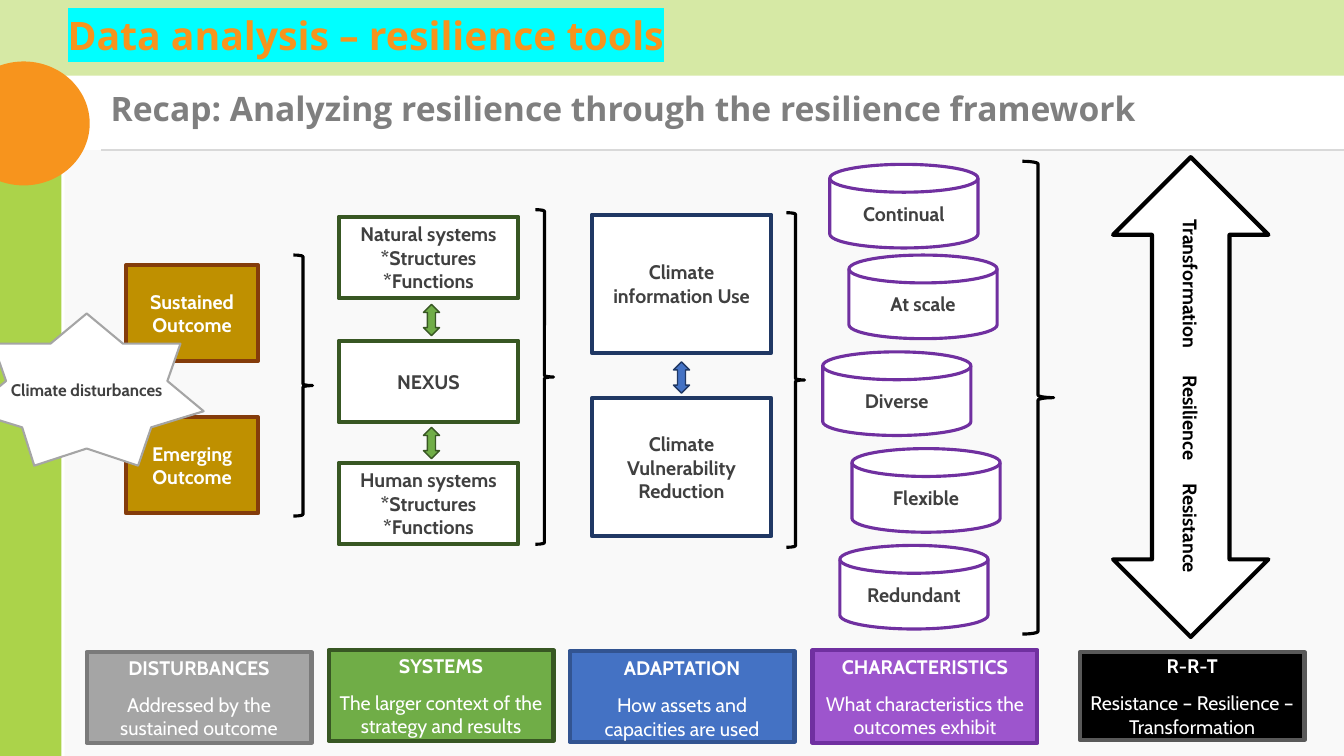
"""Build the resilience framework recap slide."""
from pptx import Presentation
from pptx.dml.color import RGBColor
from pptx.enum.shapes import MSO_CONNECTOR, MSO_SHAPE as Geo
from pptx.enum.text import MSO_ANCHOR as Anchor, MSO_AUTO_SIZE, PP_ALIGN as Align
from pptx.oxml.ns import qn
from pptx.util import Inches, Pt
from lxml.etree import SubElement

WHITE = RGBColor(0xFF, 0xFF, 0xFF)
BLACK = RGBColor(0x00, 0x00, 0x00)
PANEL = RGBColor(0xF2, 0xF2, 0xF2)
RULE = RGBColor(0xD9, 0xD9, 0xD9)
DARK = RGBColor(0x40, 0x40, 0x40)
HEADING = RGBColor(0x7F, 0x7F, 0x7F)
CHARCOAL = RGBColor(0x59, 0x59, 0x59)
GRAY = RGBColor(0xA5, 0xA5, 0xA5)
GRAY_EDGE = RGBColor(0x7A, 0x7A, 0x7A)
LIME = RGBColor(0xAB, 0xD3, 0x4A)
PALE_LIME = RGBColor(0xD6, 0xE9, 0xA5)
ORANGE = RGBColor(0xF7, 0x94, 0x1D)
GREEN = RGBColor(0x70, 0xAD, 0x47)
GREEN_EDGE = RGBColor(0x38, 0x57, 0x23)
BLUE = RGBColor(0x44, 0x72, 0xC4)
BLUE_EDGE = RGBColor(0x32, 0x54, 0x91)
NAVY = RGBColor(0x20, 0x38, 0x64)
VIOLET = RGBColor(0x9D, 0x55, 0xCD)
PURPLE = RGBColor(0x70, 0x30, 0xA0)
GOLD = RGBColor(0xBF, 0x90, 0x00)
BROWN = RGBColor(0x84, 0x3C, 0x0B)

CARDS = [
    (0.86, 6.47, 0.9, GRAY, GRAY_EDGE, "DISTURBANCES", "Addressed by the sustained outcome"),
    (3.26, 6.45, 0.9, GREEN, GREEN_EDGE, "SYSTEMS",
     "The larger context of the strategy and results"),
    (5.65, 6.46, 0.9, BLUE, BLUE_EDGE, "ADAPTATION", "How assets and capacities are used"),
    (8.06, 6.45, 0.92, VIOLET, PURPLE, "CHARACTERISTICS",
     "What characteristics the outcomes exhibit"),
    (10.71, 6.47, 0.87, BLACK, CHARCOAL, "R-R-T", "Resistance – Resilience – Transformation"),
]
SYSTEMS = [
    (2.15, ["Natural systems", "*Structures", "*Functions"]),
    (3.38, ["NEXUS"]),
    (4.59, ["Human systems", "*Structures", "*Functions"]),
]
DRUMS = [
    (8.55, 1.31, "Continual"),
    (8.74, 2.21, "At scale"),
    (8.48, 3.17, "Diverse"),
    (8.77, 4.13, "Flexible"),
    (8.65, 5.09, "Redundant"),
]
BRACES = [
    (2.91, 2.53, 0.19, 2.59),
    (5.31, 2.08, 0.18, 3.32),
    (7.8, 2.11, 0.18, 3.32),
    (10.14, 1.6, 0.31, 4.69),
]
SMALL_ARROWS = [
    (4.2, 3.02, GREEN, GREEN_EDGE),
    (4.2, 4.24, GREEN, GREEN_EDGE),
    (6.68, 3.59, BLUE, NAVY),
]
STAR = [
    (-0.3, 4.08), (0.06, 3.78), (-0.07, 3.41), (0.5, 3.41), (0.86, 3.11),
    (1.22, 3.41), (1.79, 3.41), (1.66, 3.78), (2.02, 4.08), (1.5, 4.24),
    (1.37, 4.62), (0.86, 4.45), (0.34, 4.62), (0.22, 4.24),
]
STAGES = "Transformation\tResilience\tResistance"
STAGE_TABS = (1.55, 2.62)


def write(shape, text, size=14, color=DARK, bold=True, font="Cabin", align=Align.CENTER,
          anchor=Anchor.MIDDLE, before=0, spacing=None, vertical=False, highlight=None, tabs=()):
    """Add one formatted paragraph to a shape."""
    frame = shape.text_frame
    frame.word_wrap = True
    frame.vertical_anchor = anchor
    if vertical:
        frame._txBody.bodyPr.set("vert", "vert")
    paragraph = frame.add_paragraph() if frame.text else frame.paragraphs[0]
    paragraph.alignment = align
    if before:
        paragraph.space_before = Pt(before)
    if spacing:
        paragraph.line_spacing = spacing
    if tabs:
        stops = SubElement(paragraph._p.get_or_add_pPr(), qn("a:tabLst"))
        for stop in tabs:
            SubElement(stops, qn("a:tab"), pos=str(Inches(stop)), algn="l")
    run = paragraph.add_run()
    run.text = text
    run.font.size, run.font.bold, run.font.name = Pt(size), bold, font
    run.font.color.rgb = color
    if highlight:
        props = run._r.get_or_add_rPr()
        mark = SubElement(props, qn("a:highlight"))
        SubElement(mark, qn("a:srgbClr"), val=highlight)
        props.find(qn("a:solidFill")).addnext(mark)


def paint(shape, fill=None, edge=None, weight=3):
    """Set fill and outline and drop the shadow."""
    shape.shadow.inherit = False
    if fill is None:
        shape.fill.background()
    else:
        shape.fill.solid()
        shape.fill.fore_color.rgb = fill
    if edge is None:
        shape.line.fill.background()
    else:
        shape.line.color.rgb = edge
        shape.line.width = Pt(weight)
    return shape


def add_preset(slide, geometry, box, fill=None, edge=None, weight=3):
    """Draw a preset shape in a box given in inches."""
    shape = slide.shapes.add_shape(geometry, *map(Inches, box))
    return paint(shape, fill, edge, weight)


def add_box(slide, box, lines, fill=WHITE, edge=NAVY, color=DARK):
    """Draw a framed rectangle with centred lines of text."""
    panel = add_preset(slide, Geo.RECTANGLE, box, fill, edge)
    for line in lines:
        write(panel, line, color=color)


def add_card(slide, left, top, height, fill, edge, heading, summary):
    """Draw a column caption card."""
    card = add_preset(slide, Geo.RECTANGLE, (left, top, 2.23, height), fill, edge)
    anchor = Anchor.TOP if heading == "ADAPTATION" else Anchor.MIDDLE
    write(card, heading, color=WHITE, anchor=anchor)
    write(card, summary, color=WHITE, bold=False, anchor=anchor, before=9.7)


def add_drum(slide, left, top, label):
    """Draw an upright drum with its label."""
    drum = add_preset(slide, Geo.FLOWCHART_DIRECT_ACCESS_STORAGE, (left, top, 0.83, 1.47),
                      WHITE, PURPLE, 2.25)
    drum.rotation = 270
    write(drum, label, vertical=True)


def add_backdrop(slide):
    """Draw the side bar, panel, band, circle and rule."""
    add_preset(slide, Geo.RECTANGLE, (0, 0, 0.61, 7.5), LIME)
    panel = add_preset(slide, Geo.RECTANGLE, (0.64, 1.49, 12.69, 6.01), PANEL)
    tint = panel._element.spPr.find(qn("a:solidFill"))[0]
    SubElement(tint, qn("a:alpha"), val="44000")
    add_preset(slide, Geo.RECTANGLE, (0, 0, 13.33, 0.75), PALE_LIME)
    add_preset(slide, Geo.OVAL, (-0.42, 0.61, 1.31, 1.23), ORANGE)
    rule = slide.shapes.add_connector(MSO_CONNECTOR.STRAIGHT, *map(Inches, (1, 1.49, 13.33, 1.49)))
    rule.line.color.rgb = RULE
    rule.line.width = Pt(1.5)
    SubElement(rule._element.spPr, qn("a:effectLst"))


def add_headings(slide):
    """Place the title over the band and the recap line under it."""
    title = slide.shapes.title
    slide.shapes.element.append(title.element)
    title.left, title.top, title.width, title.height = map(Inches, (0.57, 0.11, 10.54, 0.64))
    title.text_frame.auto_size = MSO_AUTO_SIZE.NONE
    heading = dict(font="Open Sans", align=Align.LEFT, anchor=Anchor.TOP, spacing=0.9)
    write(title, "Data analysis – resilience tools", size=28, color=ORANGE,
          highlight="00FFFF", **heading)
    recap = slide.shapes.add_textbox(*map(Inches, (1, 0.87, 12.33, 0.46)))
    write(recap, "Recap: Analyzing resilience through the resilience framework",
          size=24, color=HEADING, **heading)


def add_star(slide):
    """Draw the seven-pointed star of climate disturbances."""
    points = [(Inches(x), Inches(y)) for x, y in STAR]
    outline = slide.shapes.build_freeform(*points[0])
    outline.add_line_segments(points[1:], close=True)
    star = paint(outline.convert_to_shape(), WHITE, GRAY, 1.5)
    write(star, "Climate disturbances", size=12)


def main():
    """Compose and save the slide."""
    deck = Presentation()
    deck.slide_width, deck.slide_height = Inches(13.33), Inches(7.5)
    slide = deck.slides.add_slide(deck.slide_layouts[5])
    add_backdrop(slide)
    add_headings(slide)
    for card in CARDS:
        add_card(slide, *card)
    stages = add_preset(slide, Geo.UP_DOWN_ARROW, (11.04, 1.56, 1.54, 4.76), WHITE, BLACK)
    stages.text_frame.margin_top = Inches(0.23)
    write(stages, STAGES, color=BLACK, align=Align.LEFT, vertical=True, tabs=STAGE_TABS)
    for top, lines in SYSTEMS:
        add_box(slide, (3.36, top, 1.78, 0.81), lines, edge=GREEN_EDGE)
    for top, need in ((2.13, "Climate information Use"), (3.95, "Climate Vulnerability Reduction")):
        add_box(slide, (5.87, top, 1.78, 1.37), [need])
    for top, outcome in ((2.63, "Sustained Outcome"), (4.14, "Emerging Outcome")):
        add_box(slide, (1.25, top, 1.31, 0.95), [outcome], GOLD, BROWN, WHITE)
    for drum in DRUMS:
        add_drum(slide, *drum)
    for brace in BRACES:
        add_preset(slide, Geo.RIGHT_BRACE, brace, edge=BLACK, weight=2.25)
    for left, top, fill, edge in SMALL_ARROWS:
        add_preset(slide, Geo.UP_DOWN_ARROW, (left, top, 0.16, 0.31), fill, edge, 1)
    add_star(slide)
    deck.save("out.pptx")


if __name__ == "__main__":
    main()
